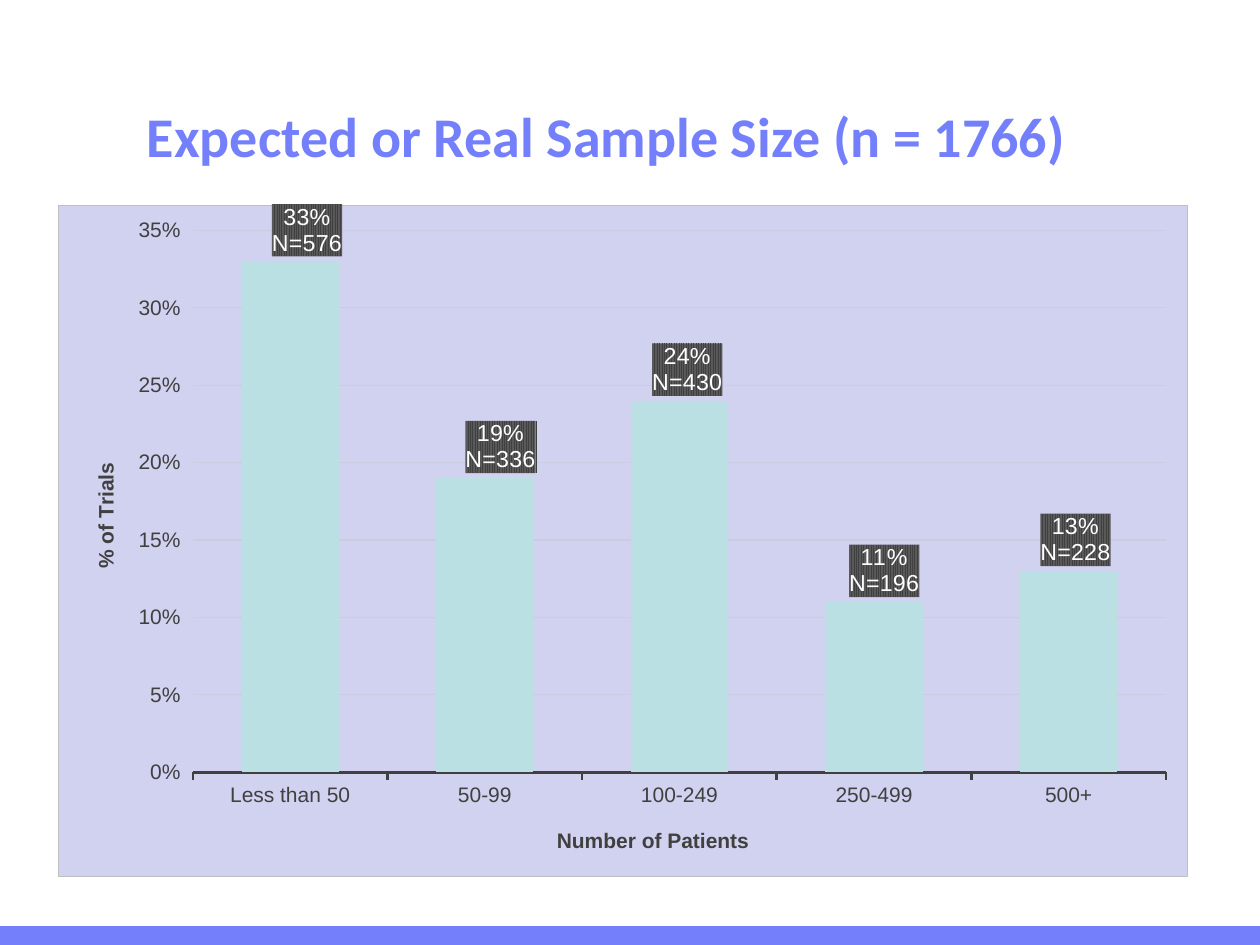
from dataclasses import dataclass

from pptx import Presentation
from pptx.chart.data import CategoryChartData
from pptx.dml.color import RGBColor as Rgb
from pptx.enum.chart import XL_CHART_TYPE as ChartType, XL_LABEL_POSITION as LabelPos
from pptx.enum.chart import XL_TICK_MARK as Tick
from pptx.enum.shapes import MSO_SHAPE as Shape
from pptx.enum.text import MSO_ANCHOR as Anchor, PP_ALIGN as Align
from pptx.oxml import parse_xml
from pptx.oxml.ns import nsdecls, qn
from pptx.util import Inches, Pt


@dataclass(frozen=True)
class Theme:
    """Colours, fonts and type sizes of the slide."""
    accent: str = "7480FB"
    panel: str = "D1D1F0"
    border: str = "BFBFBF"
    bar: str = "BBE0E3"
    grid: str = "CBCBE2"
    ink: str = "404040"
    label_stripe: str = "595959"
    label_text: str = "FFFFFF"
    heading_font: str = "Calibri"
    chart_font: str = "Arial"
    heading_size: float = 32
    axis_size: float = 12
    label_size: float = 13.3


THEME = Theme()
WIDTH, HEIGHT = Inches(10), Inches(7.5)
TRIALS = [
    ("Less than 50", 0.33, 576, 0.015),
    ("50-99", 0.19, 336, 0.014),
    ("100-249", 0.24, 430, 0.007),
    ("250-499", 0.11, 196, 0.009),
    ("500+", 0.13, 228, 0.006),
]


def place(x, y, w, h):
    """Turn shares of the slide into left, top, width and height."""
    return round(x * WIDTH), round(y * HEIGHT), round(w * WIDTH), round(h * HEIGHT)


def style_font(font, size, color, name=THEME.chart_font, bold=False):
    """Apply the type settings to a font."""
    font.name, font.size, font.bold = name, Pt(size), bold
    font.color.rgb = Rgb.from_string(color)


def style_line(line, color, width):
    """Apply a solid colour and width to a line."""
    line.color.rgb = Rgb.from_string(color)
    line.width = Pt(width)


def manual_layout(x, y, w=None, h=None):
    """Build a chart layout element from shares of the chart."""
    target = '<c:layoutTarget val="inner"/>' if w else ""
    modes = '<c:xMode val="edge"/><c:yMode val="edge"/>' if w or y else ""
    size = f'<c:w val="{w}"/><c:h val="{h}"/>' if w else ""
    return parse_xml(
        f'<c:layout {nsdecls("c")}><c:manualLayout>{target}{modes}'
        f'<c:x val="{x}"/><c:y val="{y}"/>{size}</c:manualLayout></c:layout>')


def shape_properties(content):
    """Build a chart shape-properties element."""
    return parse_xml(f'<c:spPr {nsdecls("c", "a")}>{content}</c:spPr>')


def add_heading(slide, text):
    """Place and format the title placeholder."""
    heading = slide.shapes.title
    heading.left, heading.top, heading.width, heading.height = place(0.103, 0.07, 0.757, 0.146)
    frame = heading.text_frame
    frame.text = text
    frame.vertical_anchor = Anchor.MIDDLE
    paragraph = frame.paragraphs[0]
    paragraph.alignment = Align.CENTER
    style_font(paragraph.font, THEME.heading_size, THEME.accent, THEME.heading_font, True)


def add_footer_band(slide):
    """Draw the coloured band along the foot of the slide."""
    band = slide.shapes.add_shape(Shape.RECTANGLE, *place(0, 0.98, 1, 0.02))
    band.shadow.inherit = False
    band.fill.solid()
    band.fill.fore_color.rgb = Rgb.from_string(THEME.accent)
    band.line.fill.background()


def title_axis(axis, text, x, y, rotation=0):
    """Give an axis its bold title at a fixed place and its tick type."""
    frame = axis.axis_title.text_frame
    frame.text = text
    style_font(frame.paragraphs[0].font, THEME.axis_size, THEME.ink, bold=True)
    title = axis.axis_title._element
    title.find(".//" + qn("a:bodyPr")).set("rot", str(rotation * 60000))
    for layout in title.findall(qn("c:layout")):
        title.remove(layout)
    title.find(qn("c:tx")).addnext(manual_layout(x, y))
    style_font(axis.tick_labels.font, THEME.axis_size, THEME.ink)
    axis.major_tick_mark = Tick.OUTSIDE


def format_axes(chart):
    """Set scales, lines and titles of both axes."""
    patients, share = chart.category_axis, chart.value_axis
    title_axis(patients, "Number of Patients", 0.438, 0.922)
    style_line(patients.format.line, THEME.ink, 1.5)
    title_axis(share, "% of Trials", 0.027, 0.378, -90)
    share.format.line.fill.background()
    share.minimum_scale, share.maximum_scale, share.major_unit = 0, 0.35, 0.05
    share.tick_labels.number_format = "0%"
    share.tick_labels.number_format_is_linked = False
    style_line(share.major_gridlines.format.line, THEME.grid, 0.75)


def label_bar(series, index, share, count, shift):
    """Write share and count on a striped label above one bar."""
    label = series.points[index].data_label
    frame = label.text_frame
    frame.text = f"{share:.0%}\nN={count}"
    for paragraph in frame.paragraphs:
        style_font(paragraph.font, THEME.label_size, THEME.label_text)
    label.position = LabelPos.OUTSIDE_END
    node = series._element.findall(".//" + qn("c:dLbl"))[index]
    node.find(qn("c:idx")).addnext(manual_layout(shift, 0))
    node.find(qn("c:tx")).addnext(shape_properties(
        f'<a:pattFill prst="narVert"><a:fgClr><a:srgbClr val="{THEME.ink}"/></a:fgClr>'
        f'<a:bgClr><a:srgbClr val="{THEME.label_stripe}"/></a:bgClr></a:pattFill>'))


def add_trials_chart(slide):
    """Add the column chart of trials by number of patients."""
    data = CategoryChartData(number_format="0%")
    data.categories = [trial[0] for trial in TRIALS]
    data.add_series("Series 1", [trial[1] for trial in TRIALS])
    chart = slide.shapes.add_chart(
        ChartType.COLUMN_CLUSTERED, *place(0.046, 0.216, 0.897, 0.712), data).chart
    chart.has_legend = chart.has_title = False
    style_font(chart.font, 10, "000000")
    chart._chartSpace.find(qn("c:txPr")).addprevious(shape_properties(
        f'<a:solidFill><a:srgbClr val="{THEME.panel}"/></a:solidFill>'
        f'<a:ln w="{Pt(0.75)}"><a:solidFill><a:srgbClr val="{THEME.border}"/></a:solidFill></a:ln>'))
    area = chart._chartSpace.chart.plotArea
    for layout in area.findall(qn("c:layout")):
        area.remove(layout)
    area.insert(0, manual_layout(0.119, 0.037, 0.862, 0.808))
    format_axes(chart)
    plot = chart.plots[0]
    plot.gap_width, plot.vary_by_categories = 100, False
    series = plot.series[0]
    series.format.fill.solid()
    series.format.fill.fore_color.rgb = Rgb.from_string(THEME.bar)
    for index, (_, share, count, shift) in enumerate(TRIALS):
        label_bar(series, index, share, count, shift)


def main():
    """Build and save the slide."""
    deck = Presentation()
    deck.slide_width, deck.slide_height = WIDTH, HEIGHT
    slide = deck.slides.add_slide(deck.slide_layouts[5])
    add_footer_band(slide)
    add_heading(slide, "Expected or Real Sample Size (n = 1766)")
    add_trials_chart(slide)
    deck.save("out.pptx")


if __name__ == "__main__":
    main()
